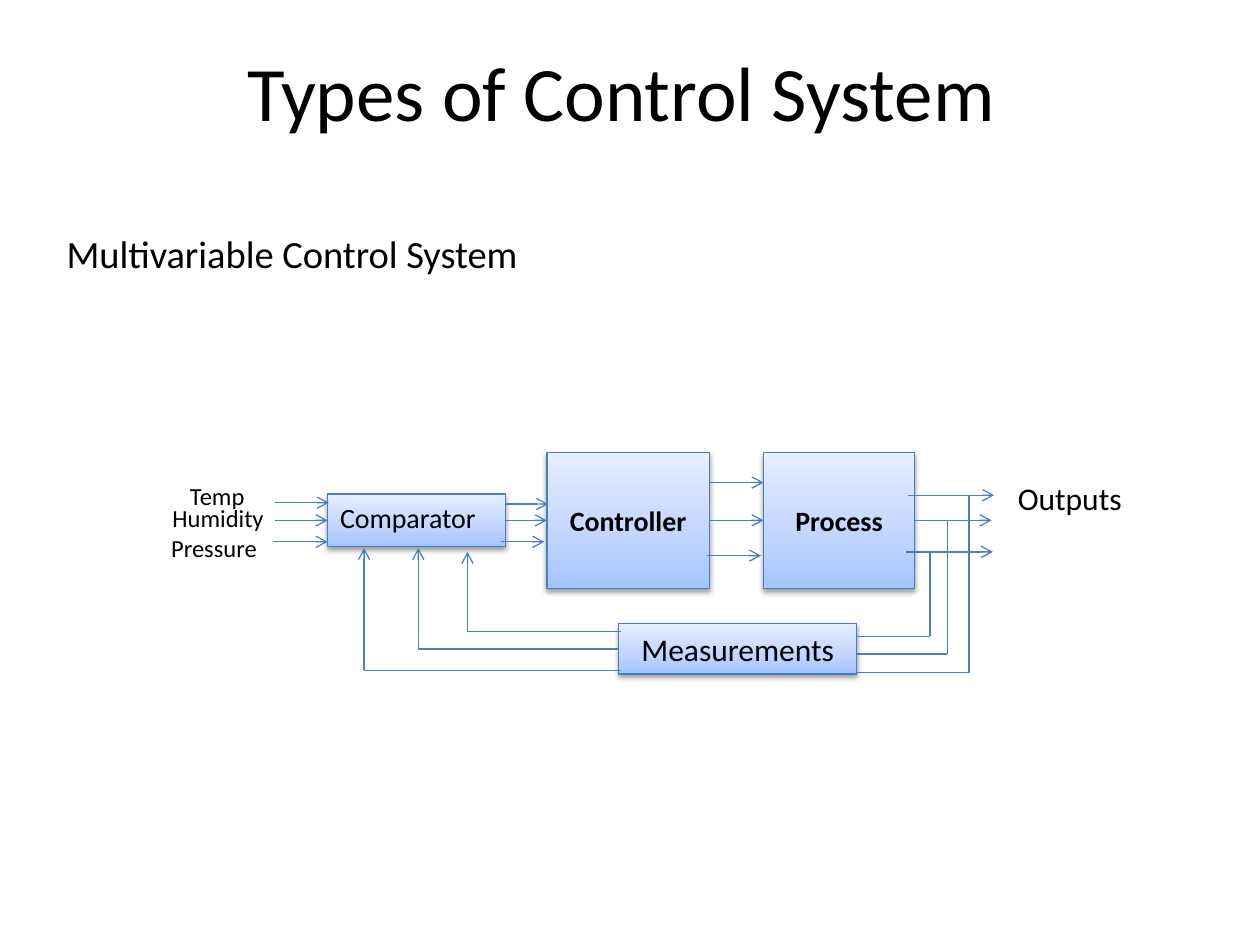
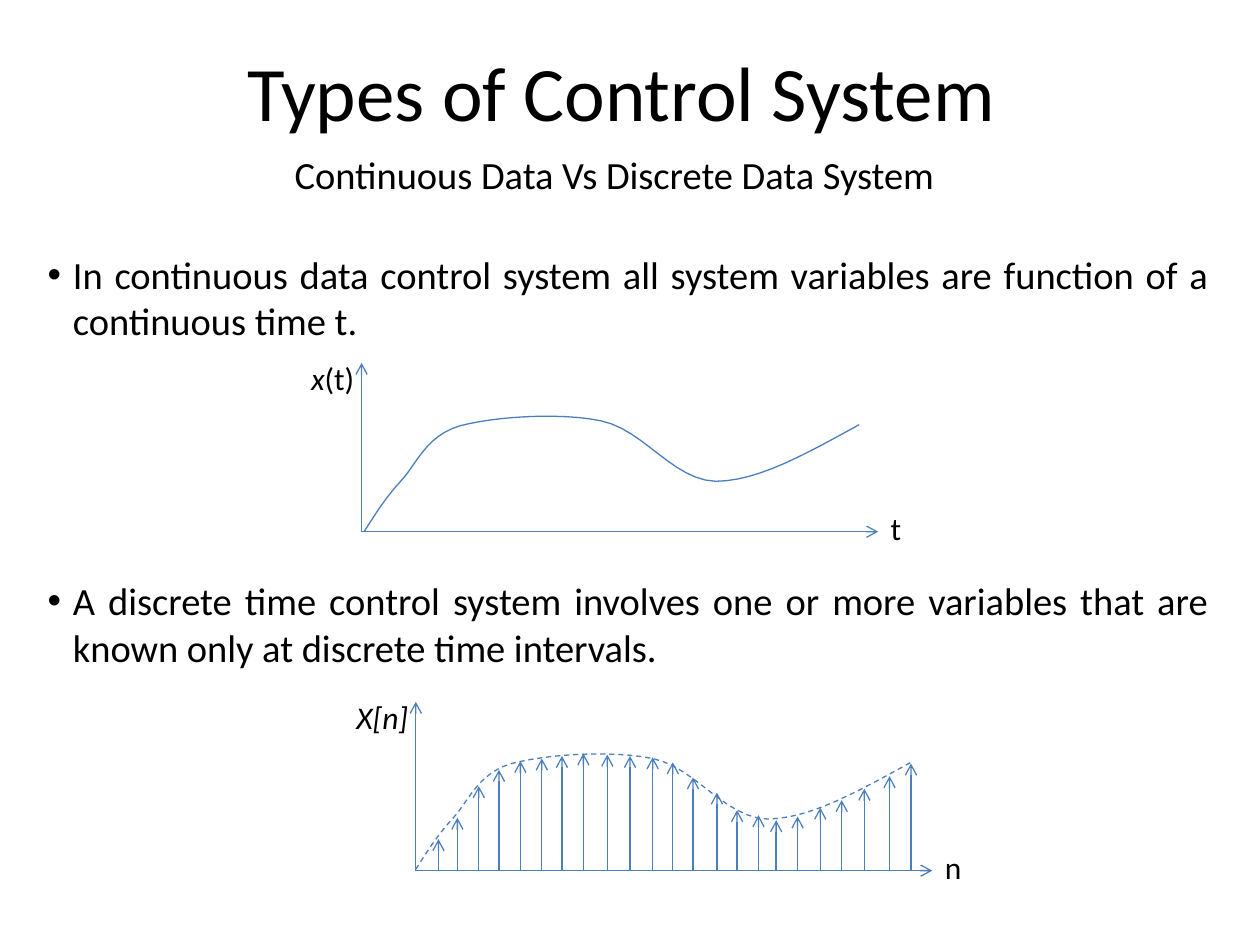
from dataclasses import dataclass

from lxml import etree
from pptx import Presentation
from pptx.dml.color import RGBColor
from pptx.enum.dml import MSO_LINE
from pptx.enum.shapes import MSO_CONNECTOR, MSO_SHAPE
from pptx.enum.text import MSO_ANCHOR, MSO_AUTO_SIZE, PP_ALIGN
from pptx.oxml.ns import qn
from pptx.util import Inches, Pt

STRAIGHT = MSO_CONNECTOR.STRAIGHT
RECTANGLE = MSO_SHAPE.RECTANGLE
DASH = MSO_LINE.DASH
TOP, MIDDLE = MSO_ANCHOR.TOP, MSO_ANCHOR.MIDDLE
LEFT, CENTER, JUSTIFY = PP_ALIGN.LEFT, PP_ALIGN.CENTER, PP_ALIGN.JUSTIFY
NO_AUTOFIT = MSO_AUTO_SIZE.NONE
LEFT_SIDE, RIGHT_SIDE = 1, 3
TITLE_ONLY = 5


@dataclass(frozen=True)
class Theme:
    font: str = "Calibri"
    ink: str = "000000"
    wire: str = "4B7EBC"
    wire_width: float = 0.75
    box_stops: tuple = ((0, "A4C4FF"), (35, "BFD4FF"), (100, "E6EEFF"))
    title: int = 44
    body: int = 22
    label: int = 18
    block: int = 16
    signal: int = 14


THEME = Theme()

TITLE = "Types of Control System "

# Start point, then (control, control, end) of each Bézier piece, from the start
SIGNAL_CURVE = (
    ((0.09, -0.14), (0.17, -0.27), (0.29, -0.40)),
    ((0.42, -0.54), (0.49, -0.76), (0.76, -0.84)),
    ((1.02, -0.91), (1.54, -0.95), (1.88, -0.88)),
    ((2.22, -0.81), (2.45, -0.41), (2.79, -0.40)),
    ((3.13, -0.40), (3.53, -0.63), (3.93, -0.85)),
)

SAMPLES = (
    (3.48, 6.66), (3.63, 6.49), (3.80, 6.24), (3.96, 6.11), (4.13, 6.04),
    (4.30, 6.02), (4.46, 6.00), (4.63, 5.98), (4.82, 5.99), (5.00, 6.00),
    (5.18, 6.01), (5.34, 6.05), (5.50, 6.17), (5.69, 6.29), (5.85, 6.43),
    (6.02, 6.47), (6.16, 6.51), (6.33, 6.48), (6.51, 6.41), (6.68, 6.35),
    (6.86, 6.26), (7.06, 6.16), (7.23, 6.06),
)


def bezier_points(pieces, steps=12):
    """Sample the joined cubic pieces, which begin at (0, 0)."""
    points, start = [], (0, 0)
    for first, second, end in pieces:
        for step in range(1, steps + 1):
            t = step / steps
            u = 1 - t
            points.append(tuple(
                u**3 * a + 3 * u * u * t * b + 3 * u * t * t * c + t**3 * d
                for a, b, c, d in zip(start, first, second, end)))
        start = end
    return points


class Deck:
    def __init__(self, theme):
        self.theme = theme
        self.prs = Presentation()
        self.prs.slide_width, self.prs.slide_height = Inches(10), Inches(7.5)
        self.slide = None

    def add_slide(self, title):
        self.slide = self.prs.slides.add_slide(self.prs.slide_layouts[TITLE_ONLY])
        heading = self.slide.shapes.title
        heading.left, heading.top = Inches(0.5), Inches(0.3)
        heading.width, heading.height = Inches(9), Inches(1.25)
        frame = heading.text_frame
        frame.text = title
        frame.vertical_anchor = TOP
        frame.auto_size = NO_AUTOFIT
        self.format_text(frame, self.theme.title, CENTER)

    def format_text(self, frame, size, align=LEFT, bold=False, italic=False):
        for paragraph in frame.paragraphs:
            paragraph.alignment = align
            for run in paragraph.runs:
                run.font.name = self.theme.font
                run.font.size = Pt(size)
                run.font.bold = bold
                run.font.italic = italic
                run.font.color.rgb = RGBColor.from_string(self.theme.ink)

    def text(self, words, left, top, width, height, size, italic=False):
        box = self.slide.shapes.add_textbox(
            Inches(left), Inches(top), Inches(width), Inches(height))
        box.text_frame.word_wrap = False
        box.text_frame.text = words
        self.format_text(box.text_frame, size, italic=italic)
        return box

    def bullets(self, items, left, top, width, height, gap):
        box = self.slide.shapes.add_textbox(
            Inches(left), Inches(top), Inches(width), Inches(height))
        frame = box.text_frame
        frame.word_wrap = True
        frame.text = "\n".join(items)
        self.format_text(frame, self.theme.body, JUSTIFY)
        for index, paragraph in enumerate(frame.paragraphs):
            if index:
                paragraph.space_before = Pt(gap)
            props = paragraph._p.get_or_add_pPr()
            props.set("marL", str(Inches(0.2)))
            props.set("indent", str(-Inches(0.2)))
            etree.SubElement(props, qn("a:buFont"), typeface="Arial")
            etree.SubElement(props, qn("a:buChar"), char="•")

    def style_line(self, line):
        line.color.rgb = RGBColor.from_string(self.theme.wire)
        line.width = Pt(self.theme.wire_width)

    def block(self, words, left, top, width, height, size,
              align=CENTER, anchor=TOP, bold=False):
        """Add a box with a vertical gradient and a soft shadow below it."""
        box = self.slide.shapes.add_shape(
            RECTANGLE, Inches(left), Inches(top), Inches(width), Inches(height))
        box.fill.gradient()
        box.fill.gradient_angle = 90
        properties = box._element.spPr
        stops = properties.find(qn("a:gradFill")).find(qn("a:gsLst"))
        for stop in list(stops):
            stops.remove(stop)
        for percent, color in self.theme.box_stops:
            stop = etree.SubElement(stops, qn("a:gs"), pos=str(percent * 1000))
            etree.SubElement(stop, qn("a:srgbClr"), val=color)
        self.style_line(box.line)

        box.shadow.inherit = False
        shadow = etree.SubElement(
            properties.find(qn("a:effectLst")), qn("a:outerShdw"),
            blurRad=str(Pt(3.1)), dist=str(Pt(1.6)), dir="5400000", rotWithShape="0")
        shade = etree.SubElement(shadow, qn("a:srgbClr"), val=self.theme.ink)
        etree.SubElement(shade, qn("a:alpha"), val="38000")

        frame = box.text_frame
        frame.word_wrap = True
        frame.vertical_anchor = anchor
        frame.text = words
        self.format_text(frame, size, align, bold)
        return box

    def wire(self, start, end, arrow=False, source=None, target=None):
        """Draw a line; source and target are (box, side) to join."""
        line = self.slide.shapes.add_connector(
            STRAIGHT, *(Inches(value) for value in (*start, *end)))
        if source:
            line.begin_connect(*source)
        if target:
            line.end_connect(*target)
        self.style_line(line.line)
        properties = line._element.spPr
        if arrow:
            etree.SubElement(properties.find(qn("a:ln")), qn("a:tailEnd"), type="arrow")
        etree.SubElement(properties, qn("a:effectLst"))

    def curve(self, left, top, dashed=False):
        points = [(Inches(left + x), Inches(top + y))
                  for x, y in bezier_points(SIGNAL_CURVE)]
        builder = self.slide.shapes.build_freeform(Inches(left), Inches(top))
        builder.add_line_segments(points, close=False)
        signal = builder.convert_to_shape()
        signal.fill.background()
        signal.shadow.inherit = False
        self.style_line(signal.line)
        if dashed:
            signal.line.dash_style = DASH

    def axes(self, left, base, value_name, value_width, time_name, time_width):
        """Draw both axes from their origin and return the value label."""
        self.wire((left, base), (left, base - 1.34), arrow=True)
        self.wire((left, base), (left + 4.1, base), arrow=True)
        size = self.theme.label
        self.text(time_name, left + 4.1, base - 0.23, time_width, 0.4, size)
        return self.text(value_name, left + 0.05 - value_width, base - 1.42,
                         value_width, 0.4, size, italic=True)


def build_multivariable(deck):
    theme = deck.theme
    deck.add_slide(TITLE)
    deck.text("Multivariable Control System", 0.43, 1.78, 3.82, 0.47, theme.body)

    controller = deck.block("Controller", 4.34, 3.59, 1.29, 1.08, theme.block,
                            anchor=MIDDLE, bold=True)
    process = deck.block("Process", 6.06, 3.59, 1.2, 1.08, theme.block,
                         anchor=MIDDLE, bold=True)
    comparator = deck.block("Comparator", 2.6, 3.92, 1.41, 0.42, theme.block, align=LEFT)
    measurements = deck.block("Measurements", 4.91, 4.95, 1.89, 0.4, theme.label)

    for name, left, top, width in (("Temp", 1.41, 3.77, 0.64),
                                   ("Humidity", 1.27, 3.94, 0.93),
                                   ("Pressure", 1.26, 4.18, 0.89)):
        deck.text(name, left, top, width, 0.34, theme.signal)
    deck.text("Outputs", 7.98, 3.75, 1.03, 0.4, theme.label)

    # Each stage: outer signals as (start, end, height), middle one joined
    stages = (
        (None, comparator, 2.18, 2.6, ((2.18, 2.61, 3.99), (2.17, 2.6, 4.3))),
        (comparator, controller, 4.01, 4.34, ((4.01, 4.35, 4.0), (3.98, 4.32, 4.3))),
        (controller, process, 5.63, 6.06, ((5.63, 6.06, 3.83), (5.61, 6.04, 4.41))),
        (process, None, 7.26, 7.87, ((7.21, 7.89, 3.93), (7.19, 7.88, 4.38))),
    )
    for source, target, start, end, outer_signals in stages:
        deck.wire((start, 4.13), (end, 4.13), arrow=True,
                  source=source and (source, RIGHT_SIDE),
                  target=target and (target, LEFT_SIDE))
        for left, right, height in outer_signals:
            deck.wire((left, height), (right, height), arrow=True)

    for x, output, level in ((7.38, 4.38, 5.05), (7.52, 4.13, 5.19), (7.69, 3.93, 5.34)):
        deck.wire((x, output), (x, level))
        deck.wire((x, level), (6.8, level))

    for x, tip, level, joined in ((2.89, 4.35, 5.32, None),
                                  (3.32, 4.35, 5.15, (measurements, LEFT_SIDE)),
                                  (3.71, 4.38, 5.01, None)):
        deck.wire((x, level), (4.93, level), target=joined)
        deck.wire((x, level), (x, tip), arrow=True)


def build_continuous_and_discrete(deck):
    deck.add_slide(TITLE)
    deck.text("Continuous Data Vs Discrete Data System", 2.24, 1.15, 5.34, 0.47,
              deck.theme.body)
    deck.bullets(
        ("In continuous data control system all system variables are function of a "
         "continuous time t.",
         "A discrete time control system involves one or more variables that are "
         "known only at discrete time intervals."),
        0.28, 1.94, 9.41, 3.43, gap=134)

    value_label = deck.axes(2.87, 4.22, "x", 0.55, "t", 0.29)
    argument = value_label.text_frame.paragraphs[0].add_run()
    argument.text = "(t)"
    deck.format_text(value_label.text_frame, deck.theme.label)
    value_label.text_frame.paragraphs[0].runs[0].font.italic = True
    deck.curve(2.89, 4.22)

    base = 6.91
    deck.curve(3.3, 6.9, dashed=True)
    deck.axes(3.3, base, "X[n]", 0.62, "n", 0.34)
    for x, top in SAMPLES:
        deck.wire((x, base), (x, top), arrow=True)


def main():
    deck = Deck(THEME)
    build_multivariable(deck)
    build_continuous_and_discrete(deck)
    deck.prs.save("out.pptx")


if __name__ == "__main__":
    main()
